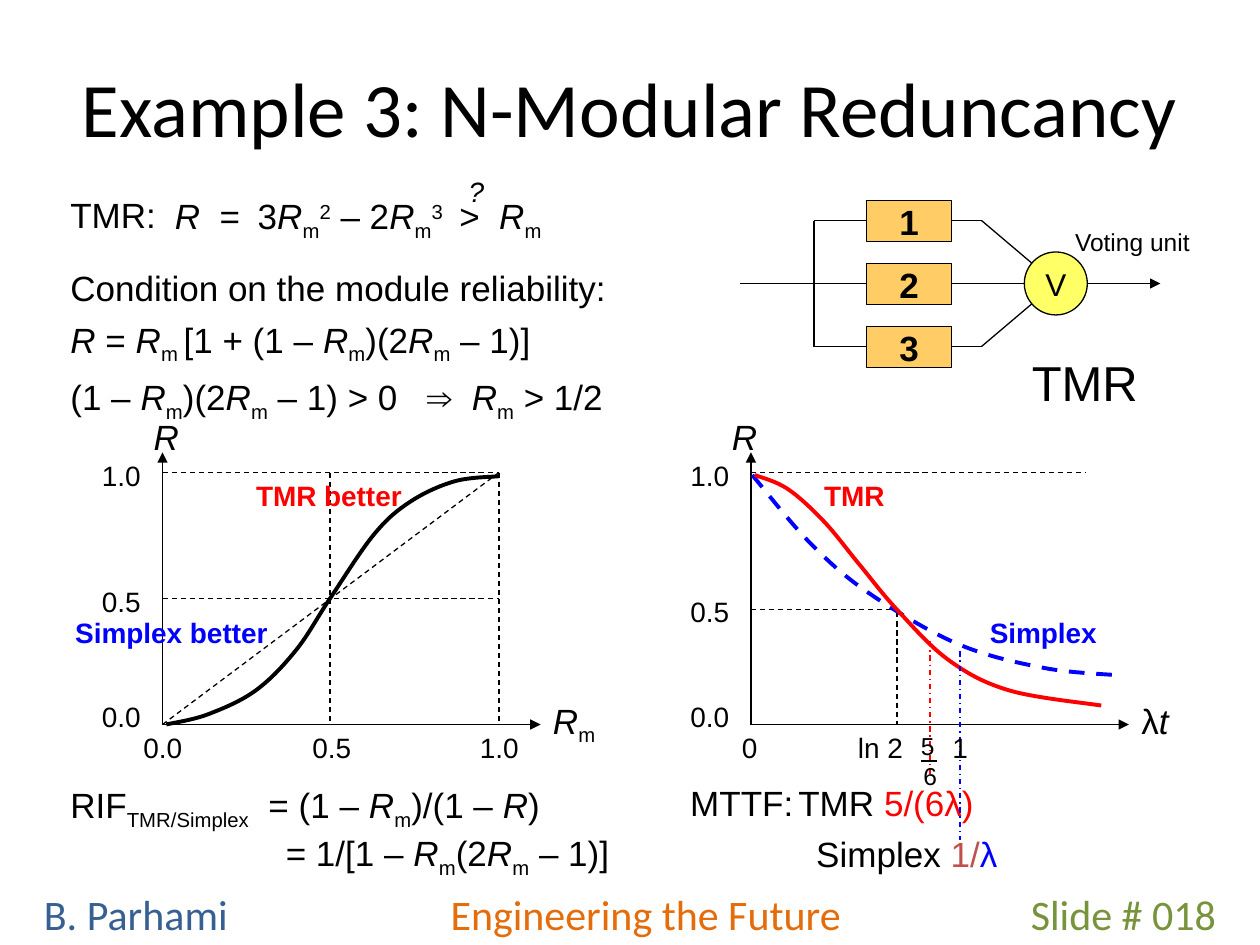
from lxml.etree import SubElement
from pptx import Presentation
from pptx.dml.color import RGBColor
from pptx.enum.dml import MSO_LINE as Dash
from pptx.enum.shapes import MSO_CONNECTOR as Connector, MSO_SHAPE as Shape
from pptx.enum.text import MSO_ANCHOR as Anchor, PP_ALIGN as Align
from pptx.oxml.ns import qn
from pptx.util import Inches, Pt

COLORS = {
    "black": "000000", "white": "FFFFFF", "red": "FF0000", "blue": "0000FF",
    "module": "FFCC66", "voter": "FFFF66", "brick": "C0504D",
    "author": "376092", "course": "E46C0A", "number": "77933C",
}
RGB = {name: RGBColor.from_string(value) for name, value in COLORS.items()}

# Spans that recur in the formulas
R = ("R", {"italic": True})
M = ("m", {"base": -25})

deck = Presentation()
deck.slide_width, deck.slide_height = Inches(10), Inches(7.5)
page = deck.slides.add_slide(deck.slide_layouts[5])
shapes = page.shapes


def write(place, paragraphs, size=16, color="black", bold=None, align=Align.LEFT,
          spacing=None, wrap=True, font="Arial", box=None):
    """Fill a box (a new text box by default); a span is a string or (string, options)."""
    box = box or shapes.add_textbox(*map(Inches, place))
    frame = box.text_frame
    frame.word_wrap = wrap
    for index, spans in enumerate(paragraphs):
        para = frame.add_paragraph() if index else frame.paragraphs[0]
        para.alignment, para.line_spacing = align, spacing
        for item in spans:
            text, options = (item, {}) if isinstance(item, str) else item
            span = para.add_run()
            span.text = text
            span.font.name, span.font.bold = font, bold
            span.font.size = Pt(options.get("size", size))
            span.font.italic = options.get("italic")
            span.font.color.rgb = RGB[options.get("color", color)]
            if "base" in options:
                span.font._element.set("baseline", str(options["base"] * 1000))
    return box


def draw_line(x1, y1, x2, y2, dash=None, arrow=False, color="black"):
    line = shapes.add_connector(Connector.STRAIGHT, *map(Inches, (x1, y1, x2, y2)))
    line.line.color.rgb, line.line.width = RGB[color], Pt(0.75)
    if dash:
        line.line.dash_style = dash
    if arrow:
        SubElement(line.line._get_or_add_ln(), qn("a:tailEnd"), type="triangle")
    SubElement(line._element.spPr, qn("a:effectLst"))


# Title and footer
title = shapes.title
title.left, title.top, title.width, title.height = map(Inches, (0.25, 0.25, 9.5, 1.2))
title.text_frame.vertical_anchor = Anchor.MIDDLE
write(None, [["Example 3: N-Modular Reduncancy"]], 44, align=Align.CENTER,
      font="Calibri", box=title)
for place, text, color, align in [
    ((0.25, 7, 2.08, 0.5), "B. Parhami", "author", Align.LEFT),
    ((2.33, 7, 5.59, 0.5), "Engineering the Future", "course", Align.CENTER),
    ((7.92, 7, 1.83, 0.5), "Slide # 018", "number", Align.RIGHT),
]:
    write(place, [[text]], 24, color, align=align, font="Calibri")

# Reliability formulas
write((0.46, 2, 4.92, 1.3), [
    ["Condition on the module reliability:"],
    [R, " = ", R, ("m ", {"base": -25}), "[1 + (1 – ", R, M, ")(2", R, M, " – 1)]"],
    ["(1 – ", R, M, ")(2", R, M, " – 1) > 0   ⇒  ", R, M, " > 1/2"],
], 20, spacing=1.2)
write((1.29, 1.47, 4.5, 0.43), [[
    R, "  = ", (" ", {"size": 16}), "3", R, M, ("2", {"base": 30}), " – 2", R, M,
    ("3 ", {"base": 30}), (" ", {"size": 22}), ">  ", R, M,
]], 20)
write((3.62, 1.34, 0.42, 0.37), [[("?", {"italic": True})]])
write((0.46, 1.42, 1, 0.5), [["TMR:"]], 20, spacing=1.2)

# Voting circuit
draw_line(5.87, 2.25, 9.21, 2.25, arrow=True)
draw_line(6.46, 1.75, 6.46, 2.75)
for y in (1.75, 2.75):
    draw_line(6.46, y, 7.79, y)
    draw_line(7.79, y, 8.38, 2.25)
parts = [(Shape.OVAL, (8.13, 2, 0.5, 0.5), "V", "voter", 18, None)]
parts += [(Shape.RECTANGLE, (6.88, 1.09 + 0.5 * n, 0.67, 0.33), str(n), "module", 20, True)
          for n in (1, 2, 3)]
for kind, place, text, fill, size, bold in parts:
    part = shapes.add_shape(kind, *map(Inches, place))
    part.shadow.inherit = False
    part.fill.solid()
    part.fill.fore_color.rgb = RGB[fill]
    part.line.color.rgb, part.line.width = RGB["black"], Pt(0.75)
    part.text_frame.vertical_anchor = Anchor.MIDDLE
    write(None, [[text]], size, bold=bold, align=Align.CENTER, wrap=False, box=part)
write((8.38, 1.75, 1.17, 0.33), [[" Voting unit"]], 14, wrap=False)
write((8.09, 2.75, 1.05, 0.57), [["TMR"]], 28, wrap=False)

# Axes of both plots
for x, r_left, variable in [
    (1.29, 1.12, [R, M]),
    (5.96, 5.71, ["λ", ("t", {"italic": True})]),
]:
    draw_line(x, 5.75, x, 3.59, arrow=True)
    draw_line(x, 5.75, x + 3, 5.75, arrow=True)
    write((r_left, 3.25, 0.92, 0.43), [[R]], 20)
    write((x + 3, 5.5, 0.83, 0.43), [variable], 20)

# Tick labels
for x, y, text in [
    (0.71, 3.59, "1.0"), (0.71, 4.59, "0.5"), (0.71, 5.5, "0.0"),
    (1.04, 5.75, "0.0"), (2.38, 5.75, "0.5"), (3.71, 5.75, "1.0"),
    (5.38, 3.59, "1.0"), (5.38, 4.67, "0.5"), (5.38, 5.5, "0.0"),
    (5.79, 5.75, "0"), (6.71, 5.75, "ln 2"),
]:
    write((x, y, 0.92, 0.37), [[text]])

# Dashed guides
for ends in [
    (1.29, 4.75, 3.96, 4.75), (1.29, 3.75, 3.96, 3.75), (3.96, 3.75, 3.96, 5.75),
    (2.62, 3.75, 2.62, 5.75), (1.29, 5.75, 3.96, 3.75),
    (5.96, 4.84, 7.12, 4.84), (5.96, 3.75, 8.62, 3.75), (7.12, 4.86, 7.12, 5.75),
]:
    draw_line(*ends, dash=Dash.DASH)

# Reliability curves: each segment between knots becomes a smooth cubic one
for color, dash, knots in [
    ("black", None, [(1.32, 5.75), (1.65, 5.67), (2.03, 5.48), (2.35, 5.16), (2.62, 4.75),
                     (2.97, 4.24), (3.26, 3.98), (3.61, 3.82), (3.96, 3.78)]),
    ("blue", Dash.DASH, [(5.97, 3.77), (6.43, 4.31), (6.9, 4.71), (7.6, 5.11),
                         (8.28, 5.3), (8.88, 5.36)]),
    ("red", None, [(5.99, 3.77), (6.25, 3.88), (6.54, 4.14), (6.82, 4.48), (7.12, 4.84),
                   (7.53, 5.24), (8.01, 5.48), (8.74, 5.6)]),
]:
    points = [(Inches(x), Inches(y)) for x, y in knots]
    builder = shapes.build_freeform(*points[0])
    builder.add_line_segments(points[1:], close=False)
    curve = builder.convert_to_shape()
    padded = [points[0], *points, points[-1]]
    segments = list(curve._element.iter(qn("a:lnTo")))
    for segment, quad in zip(segments, zip(padded, padded[1:], padded[2:], padded[3:])):
        before, start, end, after = quad
        segment.remove(segment[0])
        segment.tag = qn("a:cubicBezTo")
        controls = [
            [s + (e - b) / 6 for b, s, e in zip(before, start, end)],
            [e - (a - s) / 6 for s, e, a in zip(start, end, after)],
            end,
        ]
        for x, y in controls:
            SubElement(segment, qn("a:pt"), x=str(round(x - curve.left)),
                       y=str(round(y - curve.top)))
    curve.shadow.inherit = False
    curve.fill.background()
    curve.line.color.rgb, curve.line.width = RGB[color], Pt(2.25)
    if dash:
        curve.line.dash_style = dash

# Curve labels
for place, text, color in [
    ((1.62, 3.75, 1.92, 0.37), " TMR better", "red"),
    ((0.29, 4.84, 2.08, 0.37), " Simplex better", "blue"),
    ((5.79, 3.75, 1.92, 0.37), " TMR", "red"),
    ((7.21, 4.84, 2.08, 0.37), " Simplex", "blue"),
]:
    write(place, [[text]], color=color, bold=True, align=Align.CENTER)

# Results below the plots
rif = write((0.46, 6.17, 4.75, 0.77), [
    ["RIF", ("TMR/Simplex", {"base": -25}), "  = (1 – ", R, M, ")/(1 – ", R, ")"],
    ["= 1/[1 – ", R, M, "(2", R, M, " – 1)]"],
], 20)
mttf = write((5.38, 6.09, 3.83, 0.9), [
    ["MTTF:", (" ", {"size": 10}), "TMR ", ("5/(6λ)", {"color": "red"})],
    ["Simplex ", ("1/", {"color": "brick"}), ("λ", {"color": "blue"})],
], 20, spacing=1.2)
for box, indent in [(rif, 1.71), (mttf, 1)]:
    box.text_frame.paragraphs[1]._p.get_or_add_pPr().set("marL", str(Inches(indent)))

# Mean times marked on the time axis
backing = shapes.add_shape(Shape.RECTANGLE, *map(Inches, (7.29, 5.84, 0.42, 0.25)))
backing.shadow.inherit = False
backing.fill.solid()
backing.fill.fore_color.rgb = RGB["white"]
backing.line.fill.background()
draw_line(7.38, 5.09, 7.38, 6.17, Dash.DASH_DOT, color="red")
draw_line(7.62, 5.17, 7.62, 6.67, Dash.DASH_DOT, color="blue")
write((7.46, 5.75, 0.32, 0.37), [["1"]], wrap=False)
write((7.21, 5.75, 0.31, 0.33), [["5"]], 14, wrap=False)
write((7.23, 5.99, 0.31, 0.33), [["6"]], 14, wrap=False)
draw_line(7.31, 6.04, 7.44, 6.04)

deck.save("out.pptx")
